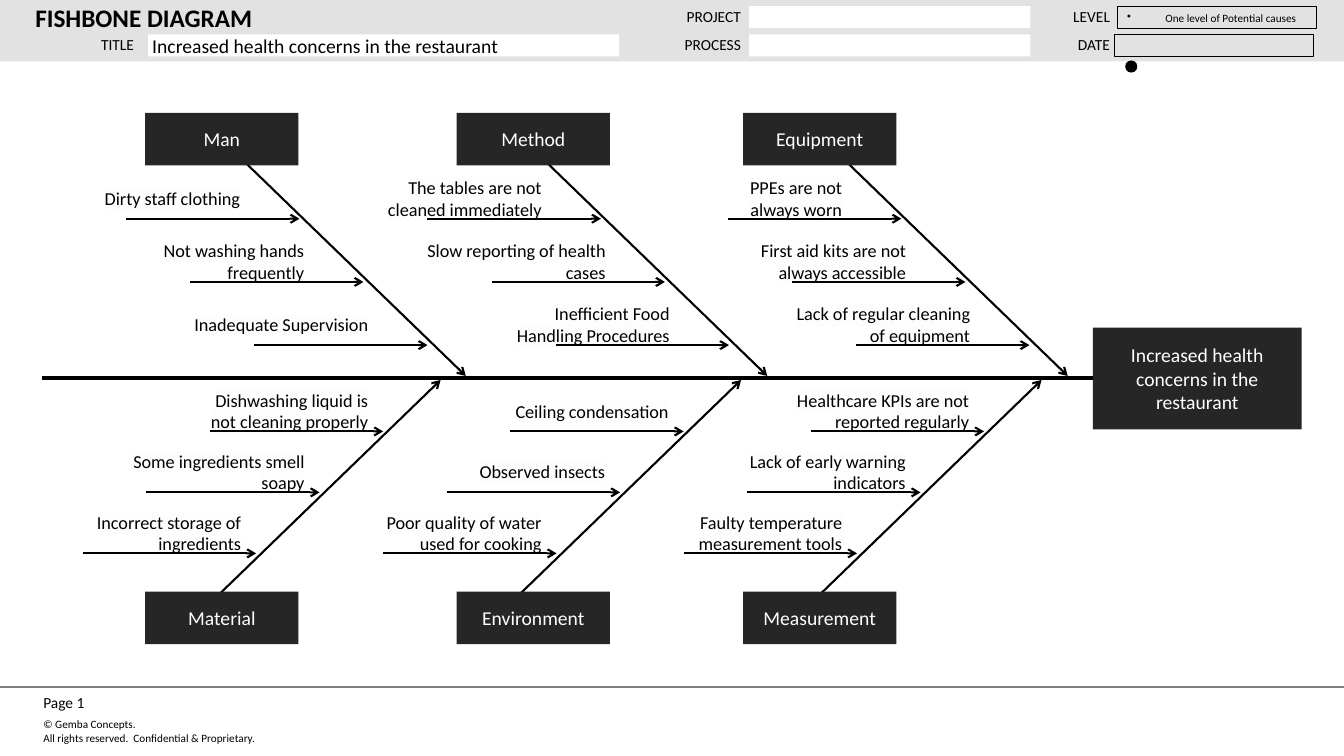
from dataclasses import dataclass

from lxml import etree
from pptx import Presentation
from pptx.dml.color import RGBColor
from pptx.enum import shapes, text
from pptx.oxml import ns
from pptx.util import Inches, Pt


@dataclass(frozen=True)
class Theme:
    font: str = "Calibri"
    ink: str = "000000"
    paper: str = "FFFFFF"
    band: str = "E2E2E2"
    box: str = "262626"
    rule: str = "808080"
    highlight: str = "FDFDFD"
    title: int = 18
    heading: int = 14
    cause: int = 13
    label: int = 11
    small: int = 8


THEME = Theme()
LEFT, CENTER, RIGHT = text.PP_ALIGN.LEFT, text.PP_ALIGN.CENTER, text.PP_ALIGN.RIGHT
TOP, MIDDLE = text.MSO_ANCHOR.TOP, text.MSO_ANCHOR.MIDDLE

TITLE = "FISHBONE DIAGRAM"
EFFECT = "Increased health concerns in the restaurant"
LEVEL = "One level of Potential causes"
PAGE = ["Page 1"]
COPYRIGHT = ["© Gemba Concepts.", "All rights reserved.  Confidential & Proprietary."]
FIELD_LABELS = [  # text, left, top, width
    ("TITLE", 0.15, 0.33, 1.22),
    ("PROJECT", 6.25, 0.05, 1.14),
    ("PROCESS", 6.25, 0.33, 1.14),
    ("LEVEL", 10.24, 0.05, 0.81),
    ("DATE", 10.24, 0.33, 0.81),
]

# Causes run from the top of the slide downwards.
UPPER = [
    ("Man", ["Dirty staff clothing", "Not washing hands frequently",
             "Inadequate Supervision"]),
    ("Method", ["The tables are not cleaned immediately",
                "Slow reporting of health cases",
                "Inefficient Food Handling Procedures"]),
    ("Equipment", ["PPEs are not always\u00a0worn",
                   "First aid kits are not always accessible",
                   "Lack of regular cleaning of equipment"]),
]
LOWER = [
    ("Material", ["Dishwashing liquid is not cleaning properly",
                  "Some ingredients smell soapy",
                  "Incorrect storage of ingredients"]),
    ("Environment", ["Ceiling condensation", "Observed insects",
                     "Poor quality of water used for cooking"]),
    ("Measurement", ["Healthcare KPIs are not reported regularly",
                     "Lack of early warning indicators",
                     "Faulty temperature measurement tools"]),
]

SPINE_Y = 3.75
BOX_LEFTS = [1.44, 4.53, 7.37]
BOX_SIZE = (1.52, 0.52)
BONE_RUN = 2.19
TWIG = 1.72
LABEL_SIZE = (1.84, 0.43)


@dataclass(frozen=True)
class Side:
    categories: list
    joints: list      # where each bone meets the spine
    joint_y: float
    bone_y: float     # where each bone leaves its box
    box_top: float
    first_tip: float  # first twig tip, measured from the joint
    tip_step: float
    first_y: float
    y_step: float
    label_gap: float  # from the label's right edge to the twig tip


SIDES = [
    Side(LOWER, [4.37, 7.35, 10.33], 3.77, 5.89, 5.87, -0.57, -0.63, 4.28, 0.605, 0.12),
    Side(UPPER, [4.62, 7.61, 10.59], 3.73, 1.61, 1.12, -1.65, 0.635, 2.17, 0.627, 0.56),
]

deck = Presentation()
deck.slide_width, deck.slide_height = Inches(13.33), Inches(7.5)
page = deck.slides.add_slide(deck.slide_layouts[5])


def rgb(value):
    return RGBColor.from_string(value)


def write(shape, lines, size, color=THEME.ink, align=LEFT, anchor=MIDDLE,
          inset=(0.04, 0.04), bold=False, bullet=False, highlight=None):
    frame = shape.text_frame
    frame.word_wrap = True
    frame.auto_size = text.MSO_AUTO_SIZE.NONE
    frame.vertical_anchor = anchor
    frame.margin_left = frame.margin_right = Inches(inset[0])
    frame.margin_top = frame.margin_bottom = Inches(inset[1])
    for index, line in enumerate(lines):
        para = frame.add_paragraph() if index else frame.paragraphs[0]
        para.alignment = align
        if bullet:
            props = para._p.get_or_add_pPr()
            props.set("marL", str(Inches(0.38)))
            props.set("indent", str(-Inches(0.38)))
            etree.SubElement(props, ns.qn("a:buChar"), char="•")
        span = para.add_run()
        span.text = line
        span.font.name, span.font.size, span.font.bold = THEME.font, Pt(size), bold
        span.font.color.rgb = rgb(color)
        if highlight:
            mark = etree.Element(ns.qn("a:highlight"))
            etree.SubElement(mark, ns.qn("a:srgbClr"), val=highlight)
            span._r.rPr.find(ns.qn("a:solidFill")).addnext(mark)


def add_block(left, top, width, height, fill=None, line=None, kind="RECTANGLE"):
    block = page.shapes.add_shape(shapes.MSO_SHAPE[kind], Inches(left), Inches(top),
                                  Inches(width), Inches(height))
    block.shadow.inherit = False
    if fill:
        block.fill.solid()
        block.fill.fore_color.rgb = rgb(fill)
    else:
        block.fill.background()
    if line:
        block.line.color.rgb = rgb(line)
        block.line.width = Pt(0.75)
    else:
        block.line.fill.background()
    return block


def add_text(left, top, width, height, lines, size, **style):
    box = page.shapes.add_textbox(Inches(left), Inches(top), Inches(width), Inches(height))
    write(box, lines, size, **style)


def add_line(start, end, width=1.5, color=THEME.ink, arrow=False):
    line = page.shapes.add_connector(shapes.MSO_CONNECTOR.STRAIGHT,
                                     *map(Inches, start + end))
    line.line.color.rgb = rgb(color)
    line.line.width = Pt(width)
    if arrow:
        etree.SubElement(line.line._get_or_add_ln(), ns.qn("a:tailEnd"), type="arrow")
    etree.SubElement(line._element.spPr, ns.qn("a:effectLst"))


def add_dark_box(left, top, width, height, caption):
    box = add_block(left, top, width, height, fill=THEME.box)
    write(box, [caption], THEME.heading, color=THEME.paper, align=CENTER,
          inset=(0.08, 0.05))


def add_header():
    title = page.shapes.title
    band = add_block(0, 0, 13.33, 0.61, fill=THEME.band)
    title._element.addprevious(band._element)
    title.left, title.top = Inches(0.31), Inches(0)
    title.width, title.height = Inches(5.79), Inches(0.34)
    write(title, [TITLE], THEME.title, bold=True)
    for caption, left, top, width in FIELD_LABELS:
        add_text(left, top, width, 0.23, [caption], THEME.label, align=RIGHT)
    subject = add_block(1.47, 0.34, 4.67, 0.22, fill=THEME.paper)
    write(subject, [EFFECT], THEME.heading)
    for top in (0.06, 0.34):
        add_block(7.43, top, 2.79, 0.22, fill=THEME.paper)
    add_block(11.05, 0.34, 1.98, 0.22, line=THEME.ink)
    level = add_block(11.08, 0.06, 1.98, 0.22, line=THEME.ink)
    write(level, [LEVEL], THEME.small, anchor=TOP, inset=(0.1, 0.05), bullet=True)
    add_block(11.16, 0.6, 0.12, 0.12, fill=THEME.ink, kind="OVAL")


def add_side(side):
    for (category, causes), joint, box_left in zip(side.categories, side.joints, BOX_LEFTS):
        add_line((joint - BONE_RUN, side.bone_y), (joint, side.joint_y), arrow=True)
        add_dark_box(box_left, side.box_top, *BOX_SIZE, category)
        for row, cause in enumerate(causes):
            tip = joint + side.first_tip + row * side.tip_step
            y = side.first_y + row * side.y_step
            add_text(tip - side.label_gap - LABEL_SIZE[0], y - 0.42, *LABEL_SIZE, [cause],
                     THEME.cause, align=RIGHT, inset=(0.03, 0.03),
                     highlight=THEME.highlight)
            add_line((tip - TWIG, y), (tip, y), arrow=True)


def add_footer():
    add_line((0, 6.82), (13.33, 6.82), color=THEME.rule)
    add_text(0.37, 6.82, 0.94, 0.3, PAGE, THEME.label, anchor=TOP, inset=(0.06, 0.06))
    add_text(0.37, 7.06, 4.31, 0.39, COPYRIGHT, THEME.small, anchor=TOP, inset=(0.06, 0.06))


add_footer()
add_header()
add_dark_box(10.84, 3.25, 2.07, 1.01, EFFECT)
add_line((0.42, SPINE_Y), (10.84, SPINE_Y), width=3)
for half in SIDES:
    add_side(half)
deck.save("out.pptx")
